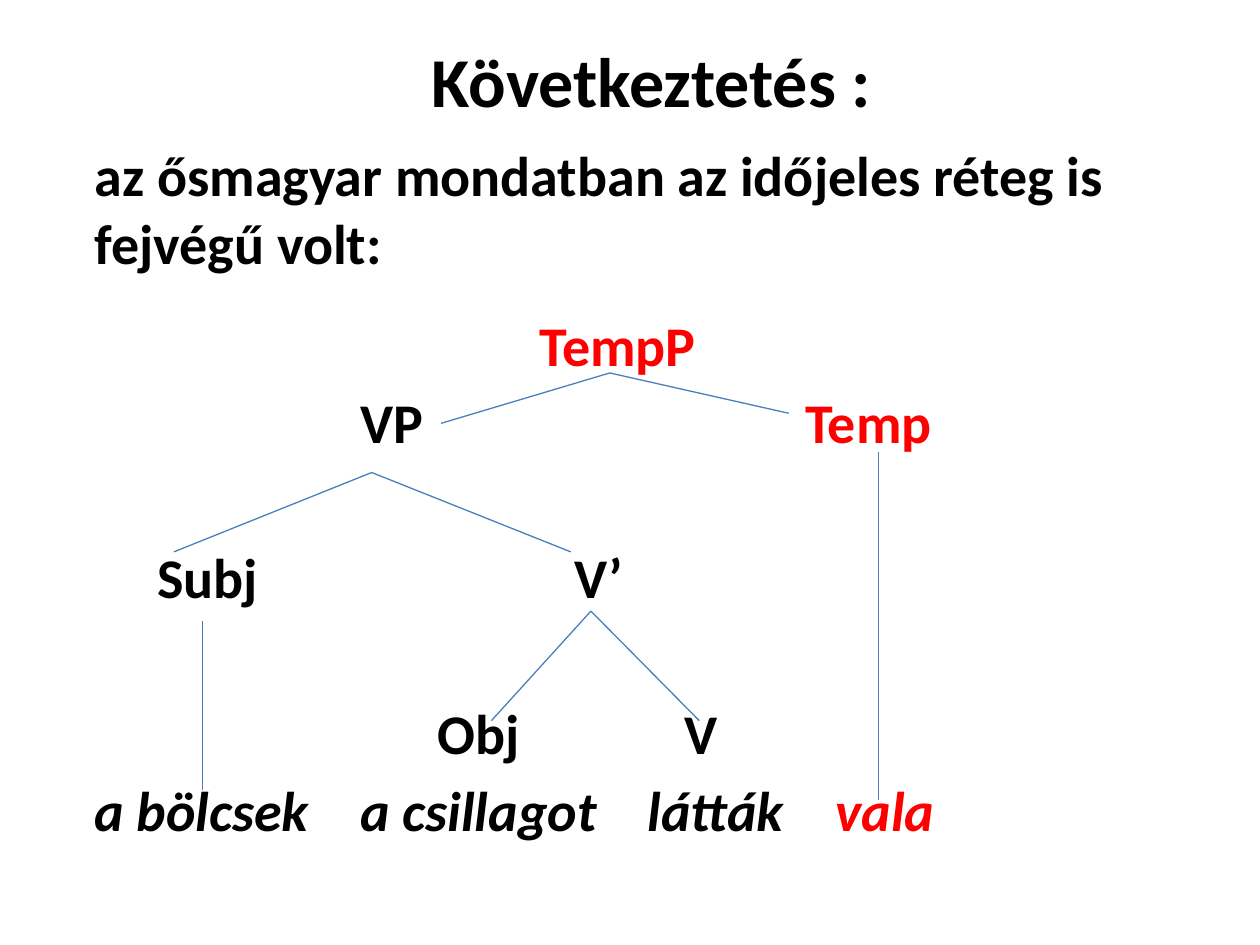
from lxml import etree
from pptx import Presentation
from pptx.dml.color import RGBColor
from pptx.enum.shapes import MSO_CONNECTOR
from pptx.enum.text import MSO_ANCHOR, PP_ALIGN
from pptx.oxml.ns import qn
from pptx.util import Inches, Pt

STRAIGHT = MSO_CONNECTOR.STRAIGHT
MIDDLE, TOP = MSO_ANCHOR.MIDDLE, MSO_ANCHOR.TOP
CENTER, LEFT = PP_ALIGN.CENTER, PP_ALIGN.LEFT

COLORS = {"text": "000000", "accent": "FF0000", "branch": "4B7EBC"}
FONT = "Calibri"
TEXT_LEFT = 0.75  # left edge of the body text, in inches
GAP, ROW = 5.7, 44.8  # paragraph gap and height of a tree row, in points

# Each row: space before, italic, words as (left edge in inches, text, colour)
TREE_ROWS = [
    (GAP + 14.1, False, [(4.28, "TempP", "accent")]),
    (GAP, False, [(2.86, "VP", "text"), (6.39, "Temp", "accent")]),
    (GAP + ROW, False, [(1.25, "Subj", "text"), (4.56, "V’", "text")]),
    (GAP + ROW, False, [(3.47, "Obj", "text"), (5.43, "V", "text")]),
    (GAP, True, [(TEXT_LEFT, "a bölcsek", "text"), (2.86, "a csillagot", "text"),
                 (5.14, "látták", "text"), (6.63, "vala", "accent")]),
]

# Parent point -> end points of its branches, in inches
BRANCHES = {
    (4.84, 2.96): [(3.5, 3.36), (6.26, 3.28)],
    (2.95, 3.75): [(1.38, 4.38), (4.53, 4.38)],
    (4.69, 4.85): [(3.9, 5.72), (5.55, 5.72)],
    (6.97, 3.59): [(6.97, 6.35)],
    (1.61, 4.93): [(1.61, 6.27)],
}


def add_text_frame(s, left, top, width, height, anchor):
    tf = s.shapes.add_textbox(*map(Inches, (left, top, width, height))).text_frame
    tf.word_wrap = True
    tf.vertical_anchor = anchor
    return tf


def add_run(p, text, size, color="text", italic=False):
    r = p.add_run()
    r.text = text
    r.font.name, r.font.size = FONT, Pt(size)
    r.font.bold, r.font.italic = True, italic
    r.font.color.rgb = RGBColor.from_string(COLORS[color])


def set_tab_stops(p, positions):
    tabs = etree.SubElement(p._p.get_or_add_pPr(), qn("a:tabLst"))
    for x in positions:
        etree.SubElement(tabs, qn("a:tab"), pos=str(Inches(x - TEXT_LEFT)), algn="l")


def add_tree_row(tf, before, italic, words):
    """Add one line of tree nodes, each placed by its own tab stop."""
    p = tf.add_paragraph()
    p.alignment = LEFT
    p.space_before = Pt(before)
    set_tab_stops(p, [x for x, _, _ in words if x > TEXT_LEFT])
    for x, text, color in words:
        tab = "\t" if x > TEXT_LEFT else ""
        add_run(p, tab + text, 32, color, italic)


def add_branch(s, start, end):
    line = s.shapes.add_connector(STRAIGHT, *map(Inches, start + end))
    line.line.color.rgb = RGBColor.from_string(COLORS["branch"])
    line.line.width = Pt(0.75)
    etree.SubElement(line._element.spPr, qn("a:effectLst"))


def main():
    prs = Presentation()
    prs.slide_width, prs.slide_height = Inches(10), Inches(7.5)
    s = prs.slides.add_slide(prs.slide_layouts[6])

    title = add_text_frame(s, 0.67, 0.21, 9, 0.85, MIDDLE).paragraphs[0]
    title.alignment = CENTER
    add_run(title, "Következtetés :", 40)

    body = add_text_frame(s, 0.28, 1.07, 9.37, 6.14, TOP)
    body.margin_left = Inches(TEXT_LEFT - 0.28)
    claim = body.paragraphs[0]
    claim.space_before = Pt(GAP)
    add_run(claim, "az ősmagyar mondatban az időjeles réteg is fejvégű volt:", 32)
    for row in TREE_ROWS:
        add_tree_row(body, *row)

    for parent, children in BRANCHES.items():
        for child in children:
            add_branch(s, parent, child)

    prs.save("out.pptx")


if __name__ == "__main__":
    main()
